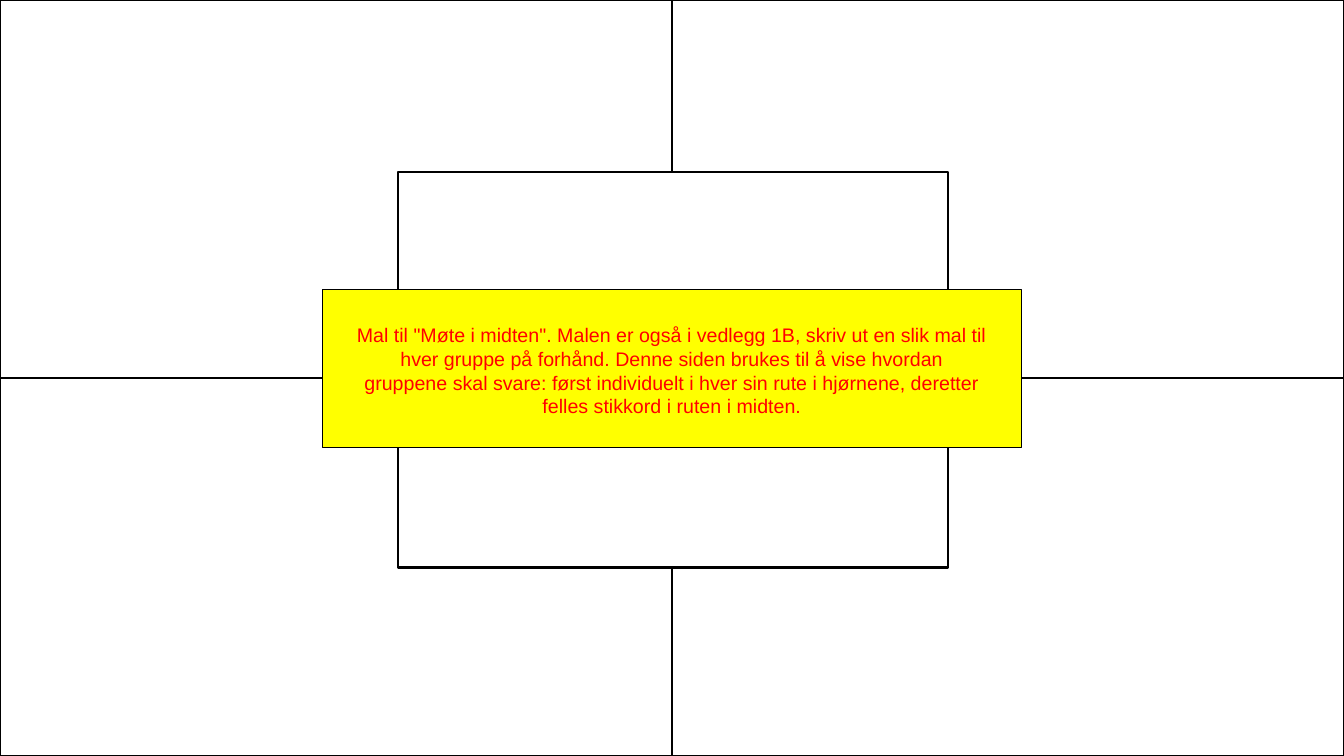
"""Build the "Møte i midten" group template slide."""
import dataclasses
import itertools

import pptx
import pptx.dml.color
import pptx.enum.shapes
import pptx.enum.text
import pptx.shapes.autoshape
import pptx.slide
import pptx.util

Inches = pptx.util.Inches
Pt = pptx.util.Pt
RGBColor = pptx.dml.color.RGBColor

WHITE = RGBColor(0xFF, 0xFF, 0xFF)
BLACK = RGBColor(0x00, 0x00, 0x00)
YELLOW = RGBColor(0xFF, 0xFF, 0x00)
RED = RGBColor(0xFF, 0x00, 0x00)

PAGE_WIDTH, PAGE_HEIGHT = 13.33, 7.5
FIELD_WIDTH, FIELD_HEIGHT = PAGE_WIDTH / 2, PAGE_HEIGHT / 2

NO_BREAK_SPACE = chr(160)
INSTRUCTION = (
    'Mal til "Møte i midten". Malen er også i vedlegg 1B, skriv ut en slik mal til '
    "hver gruppe på forhånd. Denne siden brukes til å vise hvordan "
    f"gruppene{NO_BREAK_SPACE}skal svare: først individuelt i hver sin rute i hjørnene, "
    "deretter felles stikkord i ruten i midten."
)


@dataclasses.dataclass(frozen=True)
class Field:
    left: float
    top: float
    width: float
    height: float
    fill: RGBColor = WHITE
    line_width: float = 1.5


CORNERS = [
    Field(column * FIELD_WIDTH, row * FIELD_HEIGHT, FIELD_WIDTH, FIELD_HEIGHT)
    for row, column in itertools.product(range(2), repeat=2)
]
MIDDLE = Field(3.95, 1.71, 5.45, 3.92)
NOTICE = Field(3.2, 2.87, 6.93, 1.57, YELLOW, 0.75)


def draw_field(page: pptx.slide.Slide, field: Field) -> pptx.shapes.autoshape.Shape:
    box = page.shapes.add_shape(
        pptx.enum.shapes.MSO_SHAPE.RECTANGLE,
        Inches(field.left), Inches(field.top), Inches(field.width), Inches(field.height),
    )
    box.shadow.inherit = False
    box.fill.solid()
    box.fill.fore_color.rgb = field.fill
    box.line.color.rgb = BLACK
    box.line.width = Pt(field.line_width)
    return box


def write_instruction(box: pptx.shapes.autoshape.Shape, text: str) -> None:
    frame = box.text_frame
    frame.word_wrap = True
    frame.vertical_anchor = pptx.enum.text.MSO_ANCHOR.MIDDLE
    frame.margin_left = frame.margin_right = Inches(0.2)
    frame.margin_top, frame.margin_bottom = Inches(0.04), Inches(0)
    para = frame.paragraphs[0]
    para.text = text
    para.alignment = pptx.enum.text.PP_ALIGN.CENTER
    para.space_after = Pt(2)
    para.font.name = "Arial"
    para.font.size = Pt(14)
    para.font.color.rgb = RED


def main() -> None:
    deck = pptx.Presentation()
    deck.slide_width, deck.slide_height = Inches(PAGE_WIDTH), Inches(PAGE_HEIGHT)
    page = deck.slides.add_slide(deck.slide_layouts[6])
    for field in [*CORNERS, MIDDLE]:
        draw_field(page, field)
    write_instruction(draw_field(page, NOTICE), INSTRUCTION)
    deck.save("out.pptx")


if __name__ == "__main__":
    main()
